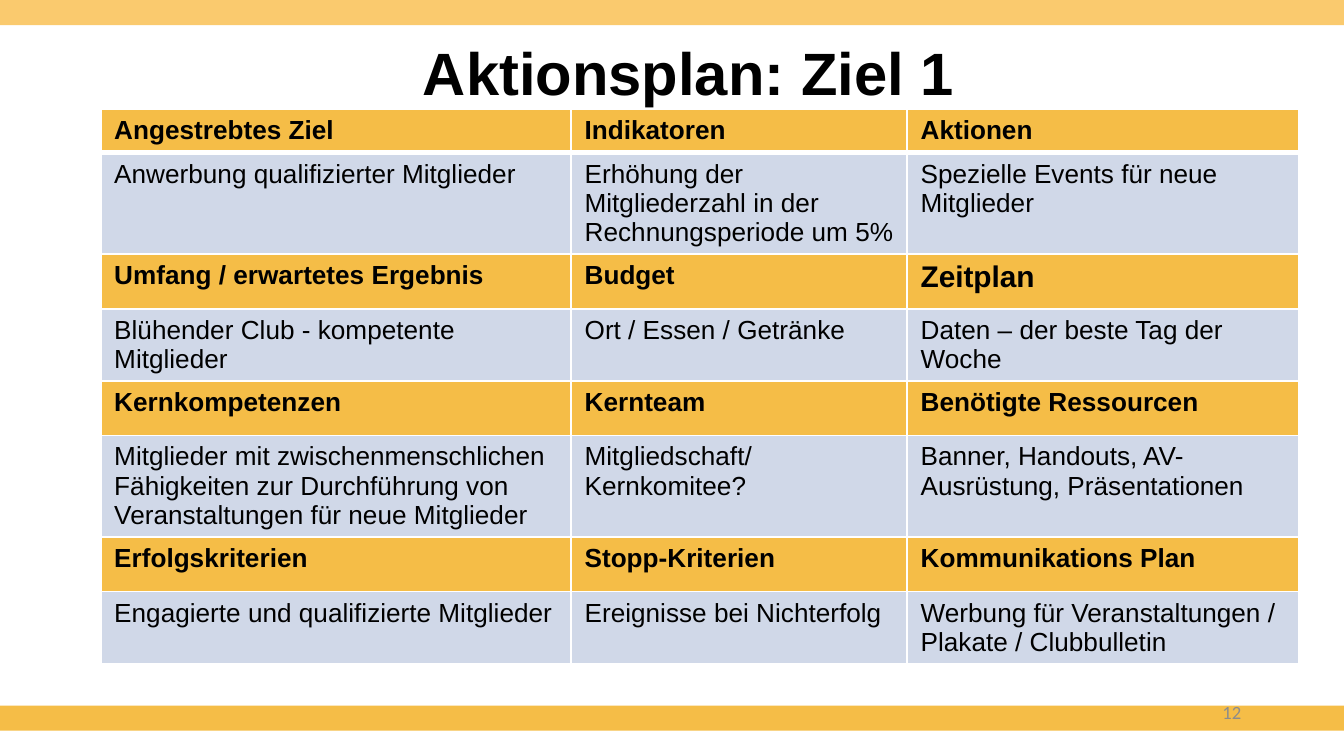
from dataclasses import dataclass

from lxml.etree import SubElement
from pptx import Presentation
from pptx.dml.color import RGBColor
from pptx.enum.shapes import MSO_SHAPE as Shape
from pptx.enum.text import MSO_ANCHOR as Anchor, MSO_AUTO_SIZE as AutoSize, PP_ALIGN as Align
from pptx.oxml.ns import qn
from pptx.util import Emu, Pt

EMU_PER_PX = 9525
SLIDE_WIDTH, SLIDE_HEIGHT = 960, 540


@dataclass(frozen=True)
class Theme:
    heading_font: str = "Arial"
    number_font: str = "Calibri"
    text: str = "000000"
    muted: str = "8C8C8C"
    top_band: str = "FACA6E"
    accent: str = "F5BD47"
    body_fill: str = "D0D8E8"
    border: str = "FFFFFF"
    title_size: int = 32
    large_size: int = 16
    body_size: int = 14
    number_size: int = 10


THEME = Theme()

COLUMN_WIDTHS = [336, 240, 280]
HEADER_HEIGHT, ROW_HEIGHT = 31, 39
PLAN = [
    ["Angestrebtes Ziel", "Indikatoren", "Aktionen"],
    ["Anwerbung qualifizierter Mitglieder",
     "Erhöhung der Mitgliederzahl in der Rechnungsperiode um 5%",
     "Spezielle Events für neue Mitglieder"],
    ["Umfang / erwartetes Ergebnis", "Budget", "Zeitplan"],
    ["Blühender Club - kompetente Mitglieder", "Ort / Essen / Getränke",
     "Daten – der beste Tag der Woche"],
    ["Kernkompetenzen", "Kernteam", "Benötigte Ressourcen"],
    ["Mitglieder mit zwischenmenschlichen Fähigkeiten zur Durchführung von "
     "Veranstaltungen für neue Mitglieder",
     "Mitgliedschaft/ Kernkomitee?",
     "Banner, Handouts, AV-Ausrüstung, Präsentationen"],
    ["Erfolgskriterien", "Stopp-Kriterien", "Kommunikations Plan"],
    ["Engagierte und qualifizierte Mitglieder", "Ereignisse bei Nichterfolg",
     "Werbung für Veranstaltungen / Plakate / Clubbulletin"],
]


def px(length):
    return Emu(length * EMU_PER_PX)


def scaled(box):
    return [px(length) for length in box]


def write(text_frame, text, size, font=THEME.heading_font, color=THEME.text,
          bold=False, align=Align.LEFT):
    paragraph = text_frame.paragraphs[0]
    paragraph.alignment = align
    run = paragraph.add_run()
    run.text = text
    run.font.name = font
    run.font.size = Pt(size)
    run.font.bold = bold
    run.font.color.rgb = RGBColor.from_string(color)


def add_band(slide, box, color):
    band = slide.shapes.add_shape(Shape.RECTANGLE, *scaled(box))
    band.shadow.inherit = False
    band.fill.solid()
    band.fill.fore_color.rgb = RGBColor.from_string(color)
    band.line.fill.background()


def place_title(slide, box, text):
    title = slide.shapes.title
    title.left, title.top, title.width, title.height = scaled(box)
    text_frame = title.text_frame
    text_frame.word_wrap = True
    text_frame.auto_size = AutoSize.NONE
    text_frame.vertical_anchor = Anchor.MIDDLE
    write(text_frame, text, THEME.title_size, bold=True, align=Align.CENTER)


def set_borders(cell, top, bottom):
    properties = cell._tc.get_or_add_tcPr()
    for side, width in (("L", 1), ("R", 1), ("T", top), ("B", bottom)):
        line = SubElement(properties, qn(f"a:ln{side}"), w=str(Pt(width)))
        fill = SubElement(line, qn("a:solidFill"))
        SubElement(fill, qn("a:srgbClr"), val=THEME.border)


def add_plan_table(slide, left, top):
    heights = [HEADER_HEIGHT] + [ROW_HEIGHT] * (len(PLAN) - 1)
    box = left, top, sum(COLUMN_WIDTHS), sum(heights)
    table = slide.shapes.add_table(len(PLAN), len(COLUMN_WIDTHS), *scaled(box)).table
    for column, width in zip(table.columns, COLUMN_WIDTHS):
        column.width = px(width)
    for row_index, (row, height, texts) in enumerate(zip(table.rows, heights, PLAN)):
        row.height = px(height)
        is_heading = row_index % 2 == 0
        for cell, text in zip(row.cells, texts):
            set_borders(cell, top=3 if row_index == 1 else 1,
                        bottom=3 if row_index == 0 else 1)
            cell.fill.solid()
            cell.fill.fore_color.rgb = RGBColor.from_string(
                THEME.accent if is_heading else THEME.body_fill)
            size = THEME.large_size if text == "Zeitplan" else THEME.body_size
            write(cell.text_frame, text, size, bold=is_heading)


def add_slide_number(slide, box, number):
    text_frame = slide.shapes.add_textbox(*scaled(box)).text_frame
    text_frame.word_wrap = True
    text_frame.vertical_anchor = Anchor.MIDDLE
    write(text_frame, number, THEME.number_size, THEME.number_font, THEME.muted,
          align=Align.RIGHT)


def build_action_plan(presentation):
    slide = presentation.slides.add_slide(presentation.slide_layouts[5])
    add_band(slide, (0, 504, SLIDE_WIDTH, 18), THEME.accent)
    add_band(slide, (0, 0, SLIDE_WIDTH, 18), THEME.top_band)
    place_title(slide, (72, 14, 840, 74), "Aktionsplan: Ziel 1")
    add_plan_table(slide, 72, 78)
    add_slide_number(slide, (672, 494, 224, 29), "12")


def main():
    presentation = Presentation()
    presentation.slide_width = px(SLIDE_WIDTH)
    presentation.slide_height = px(SLIDE_HEIGHT)
    build_action_plan(presentation)
    presentation.save("out.pptx")


if __name__ == "__main__":
    main()
